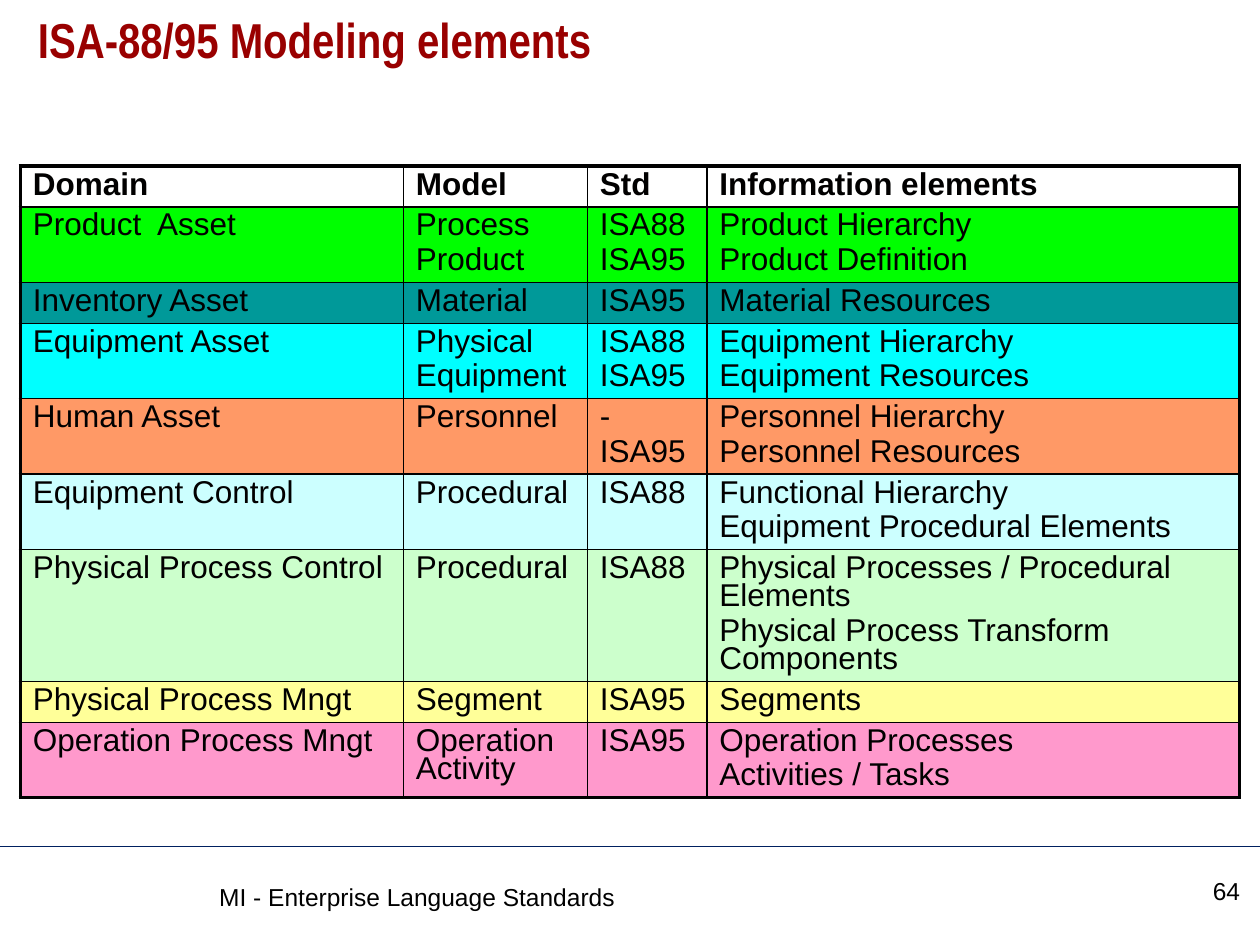
from dataclasses import dataclass

from lxml import etree
from pptx import Presentation
from pptx.dml.color import RGBColor
from pptx.enum.shapes import MSO_CONNECTOR
from pptx.enum.text import MSO_ANCHOR, PP_ALIGN
from pptx.oxml.ns import qn
from pptx.util import Cm, Pt

STRAIGHT = MSO_CONNECTOR.STRAIGHT
TOP = MSO_ANCHOR.TOP
LEFT, RIGHT = PP_ALIGN.LEFT, PP_ALIGN.RIGHT


@dataclass(frozen=True)
class Theme:
    title_font: str = "Arial Narrow"
    body_font: str = "Arial"
    title_size: float = 28
    table_size: float = 18
    footer_size: float = 14
    title_color: str = "990000"
    table_color: str = "010000"
    footer_color: str = "000000"
    border_color: str = "000000"
    rule_color: str = "002060"
    inner_border: float = 1
    outer_border: float = 2.25
    rule_width: float = 0.75


THEME = Theme()

TITLE = "ISA-88/95 Modeling elements"
FOOTER = "MI - Enterprise Language Standards"
PAGE_NUMBER = "64"

COLUMN_WIDTHS = (7.72, 3.71, 2.41, 10.74)
ROWS = [
    ("FFFFFF", 0.66, ["Domain", "Model", "Std", "Information elements"]),
    ("00FF00", 0.81, ["Product  Asset", "Process\nProduct", "ISA88\nISA95",
                      "Product Hierarchy\nProduct Definition"]),
    ("009999", 0.81, ["Inventory Asset", "Material", "ISA95", "Material Resources"]),
    ("00FFFF", 0.81, ["Equipment Asset", "Physical\nEquipment", "ISA88\nISA95",
                      "Equipment Hierarchy\nEquipment Resources"]),
    ("FF9966", 0.48, ["Human Asset", "Personnel", "-\nISA95",
                      "Personnel Hierarchy\nPersonnel Resources"]),
    ("CCFFFF", 0.91, ["Equipment Control", "Procedural", "ISA88",
                      "Functional Hierarchy\nEquipment Procedural Elements"]),
    ("CCFFCC", 1.55, ["Physical Process Control", "Procedural", "ISA88",
                      "Physical Processes / Procedural Elements\n"
                      "Physical Process Transform Components"]),
    ("FFFF99", 0.81, ["Physical Process Mngt", "Segment", "ISA95", "Segments"]),
    ("FF99CC", 1.24, ["Operation Process Mngt", "Operation Activity", "ISA95",
                      "Operation Processes\nActivities / Tasks"]),
]


def style_font(para, name, size, color, bold=False):
    font = para.font
    font.name, font.size, font.bold = name, Pt(size), bold
    font.color.rgb = RGBColor.from_string(color)


def place(shape, left, top, width, height):
    shape.left, shape.top = Cm(left), Cm(top)
    shape.width, shape.height = Cm(width), Cm(height)


def add_border(cell, side, width):
    properties = cell._tc.get_or_add_tcPr()
    line = etree.SubElement(properties, qn(f"a:ln{side}"), w=str(Pt(width)))
    fill = etree.SubElement(line, qn("a:solidFill"))
    etree.SubElement(fill, qn("a:srgbClr"), val=THEME.border_color)


def fill_cell(cell, text, color, bold, outer_sides):
    for side in "LRTB":
        width = THEME.outer_border if side in outer_sides else THEME.inner_border
        add_border(cell, side, width)
    cell.fill.solid()
    cell.fill.fore_color.rgb = RGBColor.from_string(color)
    cell.text = text
    for index, para in enumerate(cell.text_frame.paragraphs):
        para.line_spacing = 0.8
        if index:
            para.space_before = Pt(0.2 * THEME.table_size)
        style_font(para, THEME.body_font, THEME.table_size, THEME.table_color, bold)


def add_title(page):
    title = page.shapes.title
    place(title, 0.51, 0.2, 24.41, 2.11)
    title.text_frame.text = TITLE
    title.text_frame.vertical_anchor = TOP
    para = title.text_frame.paragraphs[0]
    para.alignment, para.line_spacing = LEFT, 0.9
    style_font(para, THEME.title_font, THEME.title_size, THEME.title_color, True)


def add_model_table(page):
    frame = page.shapes.add_table(len(ROWS), len(COLUMN_WIDTHS),
                                  Cm(0.41), Cm(3.35), Cm(24.58), Cm(13.61))
    table = frame.table
    table.horz_banding = False
    for column, width in zip(table.columns, COLUMN_WIDTHS):
        column.width = Cm(width)
    last_row, last_column = len(ROWS) - 1, len(COLUMN_WIDTHS) - 1
    for r, (color, height, texts) in enumerate(ROWS):
        table.rows[r].height = Cm(height)
        for c, text in enumerate(texts):
            edges = {"L": c == 0, "R": c == last_column, "T": r == 0, "B": r == last_row}
            outer_sides = [side for side, is_outer in edges.items() if is_outer]
            fill_cell(table.cell(r, c), text, color, r == 0, outer_sides)
    frame.height = Cm(13.61)


def add_rule(page, width):
    rule = page.shapes.add_connector(STRAIGHT, 0, Cm(17.07), width, Cm(17.07))
    rule.line.color.rgb = RGBColor.from_string(THEME.rule_color)
    rule.line.width = Pt(THEME.rule_width)
    etree.SubElement(rule._element.spPr, qn("a:effectLst"))


def add_footer_text(page, text, alignment, *bounds):
    box = page.shapes.add_textbox(*map(Cm, bounds))
    box.text_frame.word_wrap = True
    box.text_frame.text = text
    para = box.text_frame.paragraphs[0]
    para.alignment = alignment
    style_font(para, THEME.body_font, THEME.footer_size, THEME.footer_color)


def main():
    deck = Presentation()
    deck.slide_width, deck.slide_height = Cm(25.4), Cm(19.05)
    page = deck.slides.add_slide(deck.slide_layouts[5])
    add_rule(page, deck.slide_width)
    add_title(page)
    add_model_table(page)
    add_footer_text(page, FOOTER, LEFT, 4.17, 17.65, 17.27, 1.02)
    add_footer_text(page, PAGE_NUMBER, RIGHT, 22.91, 17.53, 2.34, 1.14)
    deck.save("out.pptx")


if __name__ == "__main__":
    main()
